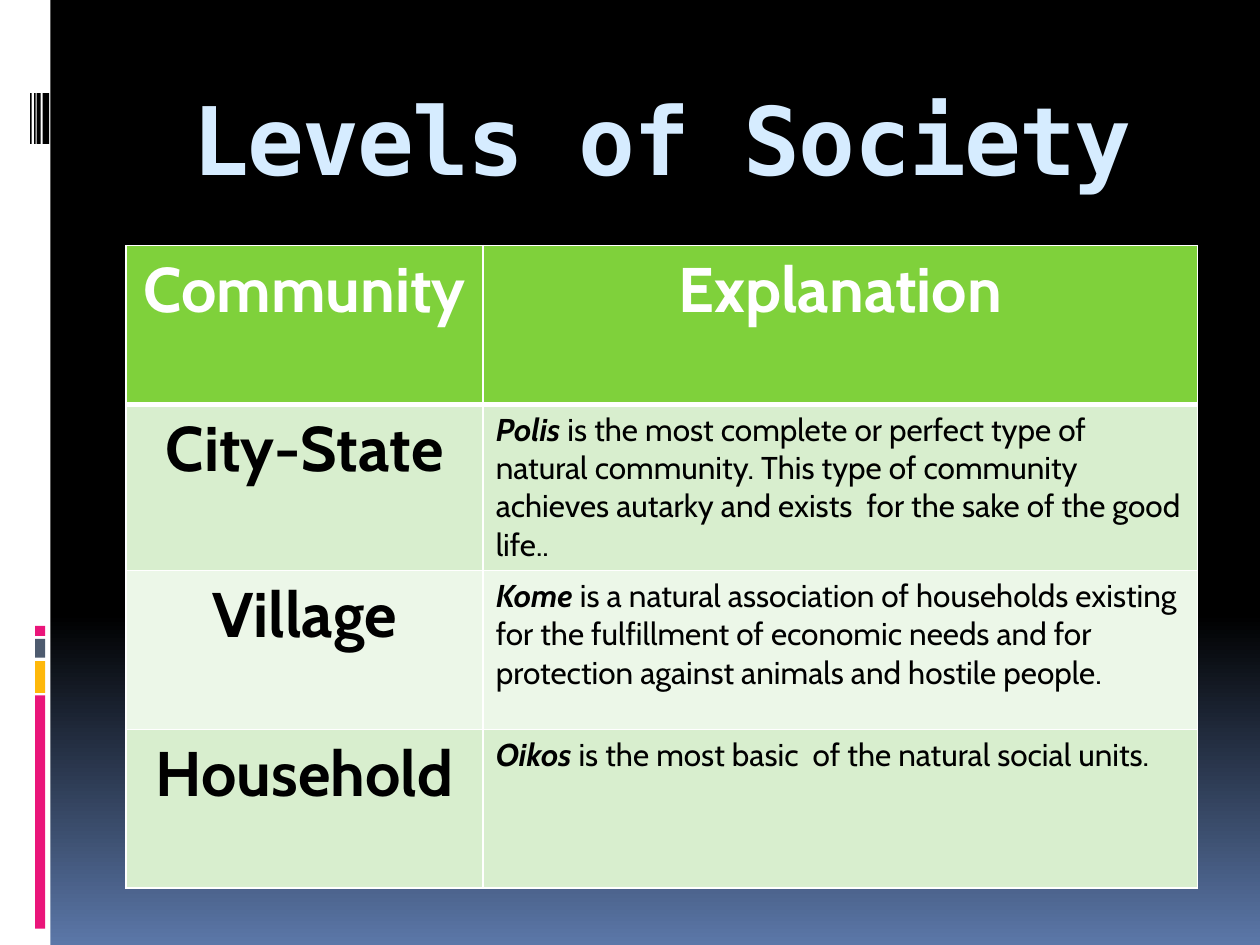
"""Build the Levels of Society slide with its table of communities."""
from copy import deepcopy

from lxml.etree import SubElement
from pptx import Presentation
from pptx.dml.color import RGBColor
from pptx.enum.shapes import MSO_SHAPE
from pptx.enum.text import MSO_ANCHOR, PP_ALIGN
from pptx.oxml.ns import qn
from pptx.util import Cm, Pt

WHITE = RGBColor(0xFF, 0xFF, 0xFF)
BLACK = RGBColor(0, 0, 0)
BLUE = RGBColor(0x5B, 0x77, 0xA8)
PALE = RGBColor(0xD6, 0xEC, 0xFF)
PINK = RGBColor(0xEA, 0x15, 0x7A)
GOLD = RGBColor(0xFE, 0xB8, 0x0A)
SLATE = RGBColor(0x4E, 0x5B, 0x6F)
GREEN = RGBColor(0x7F, 0xD1, 0x3B)
MINT = RGBColor(0xD8, 0xEE, 0xCE)
LIGHT = RGBColor(0xEC, 0xF7, 0xE8)

TITLE = "Levels of Society"
HEADS = ("Community", "Explanation")
LEVELS = [
    ("City-State", "Polis", " is the most complete or perfect type of  natural "
     "community. This type of community achieves autarky and exists  for the "
     "sake of the good life.."),
    ("Village", "Kome", " is a natural association of households existing for "
     "the fulfillment of economic needs and for protection against animals "
     "and hostile people."),
    ("Household", "Oikos", " is the most basic  of the natural social units."),
]
STOPS = [(0, BLACK), (0.65, BLACK), (1, BLUE)]
BARS = [
    (0, 0, 1.02, 19.05, WHITE),
    (0.71, 14.02, 0.2, 4.7, PINK),
    (0.71, 13.33, 0.2, 0.64, GOLD),
    (0.71, 12.88, 0.2, 0.38, SLATE),
    (0.71, 12.62, 0.2, 0.2, PINK),
    (0.86, 1.88, 0.13, 1.02, BLACK),
    (0.74, 1.88, 0.08, 1.02, BLACK),
    (0.69, 1.88, 0.03, 1.02, BLACK),
    (0.61, 1.88, 0.03, 1.02, BLACK),
]
COLS = (7.2, 14.4)
ROW = 3.2

HEAD = {"name": "Cabin", "size": Pt(36), "bold": True, "italic": False}
TERM = {"name": "Cabin", "size": Pt(18), "bold": True, "italic": True}
BODY = TERM | {"bold": False, "italic": False}
TOP = {"name": "DejaVu Sans Mono", "size": Pt(54), "bold": True}


def write(para, text, form, tint):
    run = para.add_run()
    run.text = text
    for key, value in form.items():
        setattr(run.font, key, value)
    run.font.color.rgb = tint
    return run


def paint(slide):
    fill = slide.background.fill
    fill.gradient()
    fill.gradient_angle = 270
    first = fill.gradient_stops[0]._gs
    first.addnext(deepcopy(first))
    for stop, (place, tint) in zip(fill.gradient_stops, STOPS):
        stop.position = place
        stop.color.rgb = tint


def add_bars(slide):
    for left, top, width, height, tint in BARS:
        bar = slide.shapes.add_shape(
            MSO_SHAPE.RECTANGLE, Cm(left), Cm(top), Cm(width), Cm(height))
        bar.shadow.inherit = False
        bar.fill.solid()
        bar.fill.fore_color.rgb = tint
        bar.line.fill.background()


def add_title(slide):
    title = slide.shapes.title
    box = {"left": Cm(2.54), "top": Cm(1.42), "width": Cm(21.6), "height": Cm(2.54)}
    for key, value in box.items():
        setattr(title, key, value)
    frame = title.text_frame
    frame.vertical_anchor = MSO_ANCHOR.BOTTOM
    frame.margin_bottom = Cm(0.05)
    para = frame.paragraphs[0]
    para.alignment = PP_ALIGN.CENTER
    run = write(para, TITLE, TOP, PALE)
    run._r.get_or_add_rPr().set("spc", "-100")


def edge(cell, side, width):
    line = SubElement(cell._tc.get_or_add_tcPr(), qn(f"a:ln{side}"), w=str(Pt(width)))
    fill = SubElement(line, qn("a:solidFill"))
    SubElement(fill, qn("a:srgbClr"), val=str(WHITE))


def dress(cell, row, tint):
    widths = {"L": 1, "R": 1, "T": 3 if row == 1 else 1, "B": 3 if row == 0 else 1}
    for side, width in widths.items():
        edge(cell, side, width)
    cell.fill.solid()
    cell.fill.fore_color.rgb = tint


def add_levels(slide):
    count = len(LEVELS) + 1
    table = slide.shapes.add_table(
        count, len(COLS), Cm(2.54), Cm(4.95), Cm(sum(COLS)), Cm(ROW * count)).table
    for col, width in zip(table.columns, COLS):
        col.width = Cm(width)
    for row in range(count):
        table.rows[row].height = Cm(ROW)
        tint = GREEN if row == 0 else MINT if row % 2 else LIGHT
        for col in range(len(COLS)):
            dress(table.cell(row, col), row, tint)

    def head(row, col, text, tint):
        para = table.cell(row, col).text_frame.paragraphs[0]
        para.alignment = PP_ALIGN.CENTER
        write(para, text, HEAD, tint)

    for col, text in enumerate(HEADS):
        head(0, col, text, WHITE)
    for row, (name, term, text) in enumerate(LEVELS, 1):
        head(row, 0, name, BLACK)
        para = table.cell(row, 1).text_frame.paragraphs[0]
        write(para, term, TERM, BLACK)
        write(para, text, BODY, BLACK)


def main():
    deck = Presentation()
    deck.slide_width, deck.slide_height = Cm(25.4), Cm(19.05)
    slide = deck.slides.add_slide(deck.slide_layouts[5])
    paint(slide)
    add_bars(slide)
    add_title(slide)
    add_levels(slide)
    deck.save("out.pptx")


if __name__ == "__main__":
    main()
